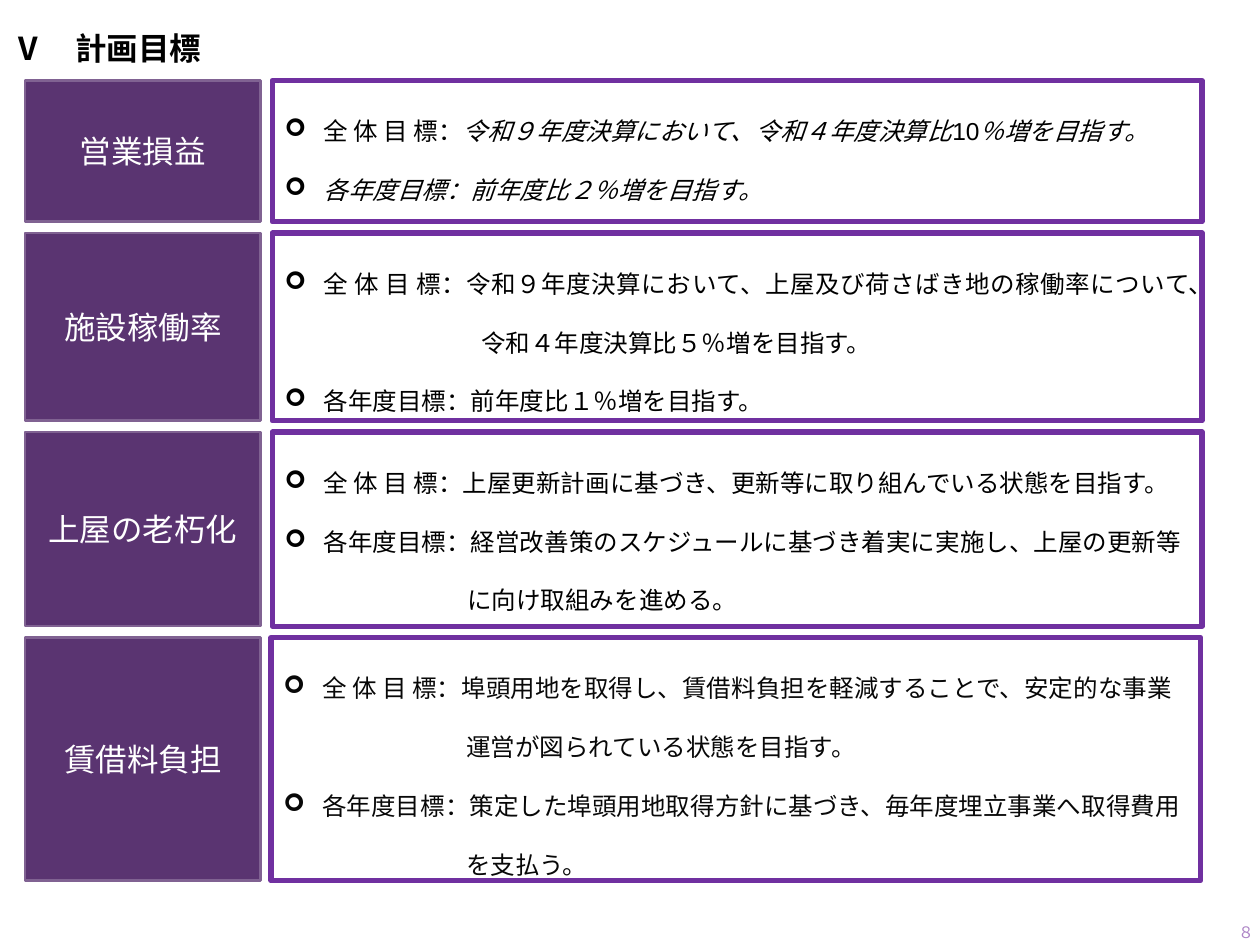
from pptx import Presentation
from pptx.dml.color import RGBColor as RGB
from pptx.enum.shapes import MSO_SHAPE as Shape
from pptx.enum.text import MSO_ANCHOR as Anchor, PP_ALIGN as Align
from pptx.oxml.ns import qn
from pptx.util import Inches, Pt
from lxml.etree import SubElement

# Content: a goal line is (is_bulleted, [(text, italic), ...])
TITLE = "Ⅴ\u3000計画目標".replace("\u3000", "　")
PAGE = "８"


def goal(text):
    return True, [(text, False)]


def more(text):
    return False, [(text, False)]


# (label, top, height, panel left, continuation indent, text colour, lines)
ROWS = [
    ("営業損益", 0.64, 1.12, 2.16, 1.45, "000000", [
        (True, [("全 体 目 標：", False),
                ("令和９年度決算において、令和４年度決算比", True),
                ("10", False), ("％増を目指す。", True)]),
        (True, [("各年度目標：前年度比２％増を目指す。", True)])]),
    ("施設稼働率", 1.85, 1.49, 2.16, 1.56, "000000", [
        goal("全 体 目 標：令和９年度決算において、上屋及び荷さばき地の稼働率について、"),
        more("令和４年度決算比５％増を目指す。"),
        goal("各年度目標：前年度比１％増を目指す。")]),
    ("上屋の老朽化", 3.43, 1.54, 2.16, 1.45, "000000", [
        goal("全 体 目 標：上屋更新計画に基づき、更新等に取り組んでいる状態を目指す。"),
        goal("各年度目標：経営改善策のスケジュールに基づき着実に実施し、上屋の更新等"),
        more("に向け取組みを進める。")]),
    ("賃借料負担", 5.06, 1.93, 2.15, 1.45, "080808", [
        goal("全 体 目 標：埠頭用地を取得し、賃借料負担を軽減することで、安定的な事業"),
        more("運営が図られている状態を目指す。"),
        goal("各年度目標：策定した埠頭用地取得方針に基づき、毎年度埋立事業へ取得費用"),
        more("を支払う。")]),
]

THEME = dict(body="Arial", label="Quicksand", heading_pt=18, goal_pt=14, page_pt=9,
             ink="000000", white="FFFFFF", plum="5A3471", plum_edge="806292",
             violet="7030A0", lilac="AD84C6")
LABEL_LEFT, LABEL_W, PANEL_W, BULLET_INDENT = 0.2, 1.87, 7.38, 0.31


def add_run(p, text, font, size, color, bold=False, italic=False):
    r = p.add_run()
    r.text = text
    f = r.font
    f.name, f.size, f.bold, f.italic = font, Pt(size), bold, italic
    f.color.rgb = RGB.from_string(color)


def add_text(shapes, box, text, align, anchor, *style, **kw):
    tf = shapes.add_textbox(*map(Inches, box)).text_frame
    tf.word_wrap, tf.vertical_anchor = True, anchor
    tf.paragraphs[0].alignment = align
    add_run(tf.paragraphs[0], text, *style, **kw)


def add_box(shapes, box, fill, edge, width, anchor):
    sp = shapes.add_shape(Shape.RECTANGLE, *map(Inches, box))
    sp.shadow.inherit = False
    if fill:
        sp.fill.solid()
        sp.fill.fore_color.rgb = RGB.from_string(fill)
    else:
        sp.fill.background()
    sp.line.color.rgb = RGB.from_string(edge)
    sp.line.width = Pt(width)
    tf = sp.text_frame
    tf.word_wrap, tf.vertical_anchor = True, anchor
    return tf


def set_indent(p, bulleted, continuation):
    pPr = p._p.get_or_add_pPr()
    left, hang = (BULLET_INDENT, -BULLET_INDENT) if bulleted else (continuation, 0)
    pPr.set("marL", str(Inches(left)))
    pPr.set("indent", str(Inches(hang)))
    if bulleted:
        SubElement(pPr, qn("a:buFont")).set("typeface", "Wingdings")
        SubElement(pPr, qn("a:buChar")).set("char", "➢")
    else:
        SubElement(pPr, qn("a:buNone"))


def add_row(slide, label, top, height, panel_left, continuation, color, lines):
    shapes = slide.shapes.add_group_shape().shapes
    # Label block
    tf = add_box(shapes, (LABEL_LEFT, top, LABEL_W, height),
                 THEME["plum"], THEME["plum_edge"], 1.5, Anchor.MIDDLE)
    tf.paragraphs[0].alignment = Align.CENTER
    add_run(tf.paragraphs[0], label, THEME["label"], THEME["heading_pt"], THEME["white"])
    # Goals panel
    tf = add_box(shapes, (panel_left, top, PANEL_W, height),
                 None, THEME["violet"], 3, Anchor.TOP)
    for i, (bulleted, runs) in enumerate(lines):
        p = tf.add_paragraph() if i else tf.paragraphs[0]
        p.alignment, p.line_spacing = Align.JUSTIFY, 2.0
        set_indent(p, bulleted, continuation)
        for text, italic in runs:
            add_run(p, text, THEME["body"], THEME["goal_pt"], color, italic=italic)


def main():
    prs = Presentation()
    prs.slide_width, prs.slide_height = Inches(10), Inches(7.5)
    s = prs.slides.add_slide(prs.slide_layouts[6])
    # Heading and page number
    add_text(s.shapes, (0, 0.18, 8.62, 0.42), TITLE, Align.LEFT, Anchor.TOP,
             THEME["body"], THEME["heading_pt"], THEME["ink"], bold=True)
    add_text(s.shapes, (9.49, 7.2, 0.56, 0.4), PAGE, Align.RIGHT, Anchor.MIDDLE,
             THEME["label"], THEME["page_pt"], THEME["lilac"])
    # Target rows
    for row in ROWS:
        add_row(s, *row)
    prs.save("out.pptx")


if __name__ == "__main__":
    main()
